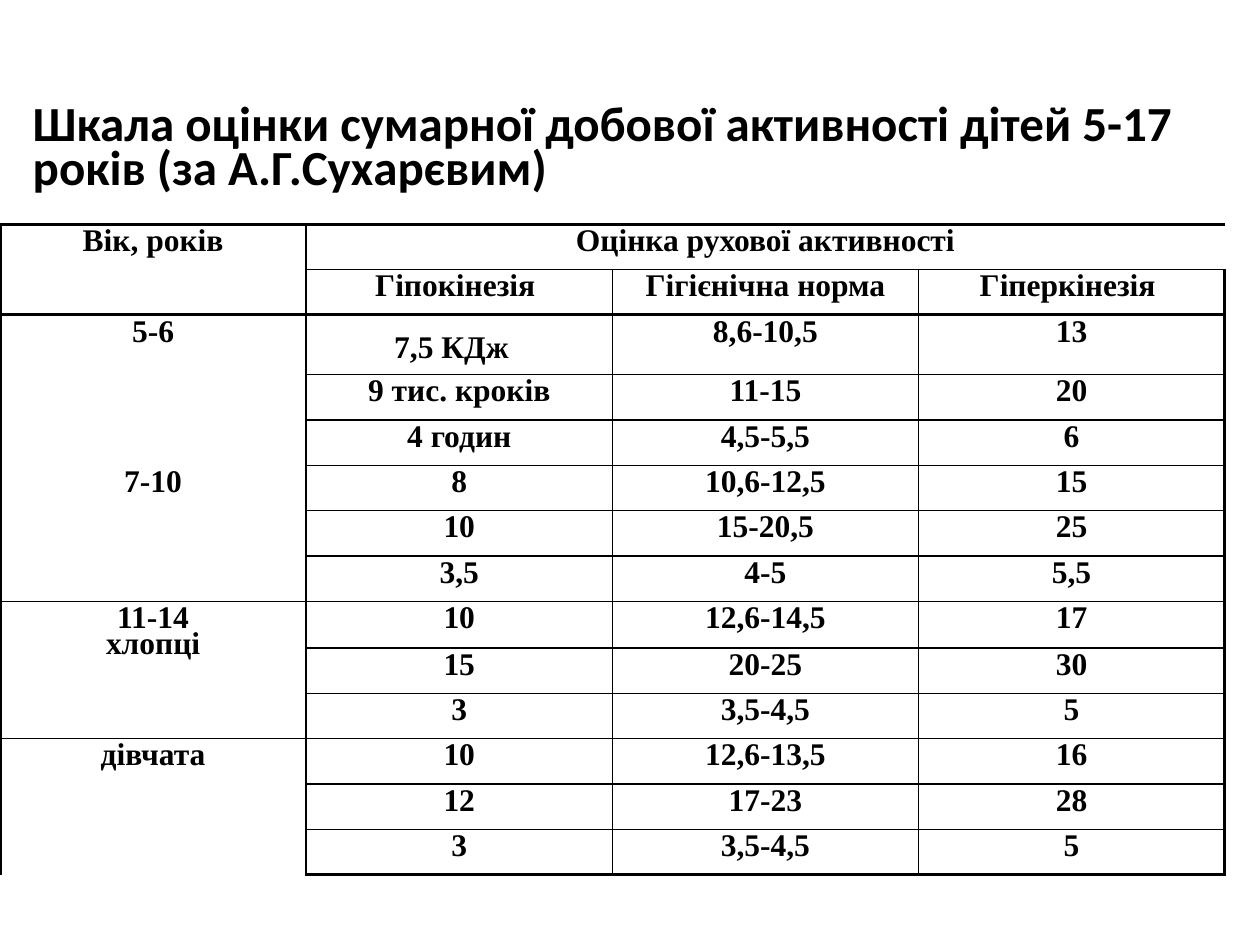
from lxml import etree
from pptx import Presentation
from pptx.dml.color import RGBColor
from pptx.enum.text import MSO_ANCHOR, PP_ALIGN
from pptx.oxml.ns import qn
from pptx.util import Inches, Pt

LEFT, CENTER = PP_ALIGN.LEFT, PP_ALIGN.CENTER
MIDDLE, TOP = MSO_ANCHOR.MIDDLE, MSO_ANCHOR.TOP
BLACK, WHITE = "000000", "FFFFFF"
TITLE = "Шкала оцінки сумарної добової активності дітей 5-17 років (за А.Г.Сухарєвим)"
AGE_HEADING = "Вік, років"
ACTIVITY_HEADING = "Оцінка рухової активності"
LEVELS = ["Гіпокінезія ", "Гігієнічна норма", "Гіперкінезія "]
AGE_GROUPS = [
    (["5-6"], [("7,5 КДж", "8,6-10,5", "13"),
               ("9 тис. кроків", "11-15", "20"),
               ("4 годин", "4,5-5,5", "6")]),
    (["7-10"], [("8", "10,6-12,5", "15"),
                ("10", "15-20,5", "25"),
                ("3,5", "4-5", "5,5")]),
    (["11-14", "хлопці"], [("10", "12,6-14,5", "17"),
                           ("15", "20-25", "30"),
                           ("3", "3,5-4,5", "5")]),
    (["дівчата"], [("10", "12,6-13,5", "16"),
                   ("12", "17-23", "28"),
                   ("3", "3,5-4,5", "5")]),
]
HEADER_ROWS, GROUP_ROWS, COLUMNS = 2, 3, 4
ROWS = HEADER_ROWS + GROUP_ROWS * len(AGE_GROUPS)
COLUMN_WIDTH, ROW_HEIGHT = 2.43, 0.36
SPECIAL_HEIGHTS = {2: 0.38, 8: 0.37}
HEAVY_ROW_LINES, HEAVY_COLUMN_LINES = (0, HEADER_ROWS, ROWS), (0, COLUMNS)


def add_run(paragraph, text, size, font, color):
    run = paragraph.add_run()
    run.text = text
    run.font.size = Pt(size)
    run.font.name = font
    run.font.bold = True
    run.font.color.rgb = RGBColor.from_string(color)


def set_border(cell, tag, width):
    line = etree.SubElement(cell._tc.get_or_add_tcPr(), qn("a:" + tag))
    if width is None:
        etree.SubElement(line, qn("a:noFill"))
        return
    line.set("w", str(Pt(width)))
    fill = etree.SubElement(line, qn("a:solidFill"))
    etree.SubElement(fill, qn("a:srgbClr")).set("val", BLACK)


def edge_width(index, first, last, heavy):
    if first < index < last:
        return None
    return 2 if index in heavy else 1


def add_block(table, top, left, lines, height=1, width=1):
    bottom, right = top + height, left + width
    for row in range(top, bottom):
        for column in range(left, right):
            cell = table.cell(row, column)
            for tag, index in (("lnL", column), ("lnR", column + 1)):
                set_border(cell, tag, edge_width(index, left, right, HEAVY_COLUMN_LINES))
            for tag, index in (("lnT", row), ("lnB", row + 1)):
                set_border(cell, tag, edge_width(index, top, bottom, HEAVY_ROW_LINES))
            cell.fill.background()
    origin = table.cell(top, left)
    if height * width > 1:
        origin.merge(table.cell(bottom - 1, right - 1))
    origin.vertical_anchor = TOP
    frame = origin.text_frame
    for number, text in enumerate(lines):
        paragraph = frame.add_paragraph() if number else frame.paragraphs[0]
        paragraph.alignment = CENTER
        paragraph.line_spacing = 0.75
        add_run(paragraph, text, 18, "Times New Roman", BLACK)


presentation = Presentation()
presentation.slide_width, presentation.slide_height = Inches(10), Inches(7.5)
slide = presentation.slides.add_slide(presentation.slide_layouts[5])

title = slide.shapes.title
title.left, title.top, title.width, title.height = map(Inches, (0.16, 0.82, 9.84, 0.75))
title.text_frame.vertical_anchor = MIDDLE
title.text_frame.word_wrap = True
heading = title.text_frame.paragraphs[0]
heading.alignment = LEFT
heading.line_spacing = 0.75
add_run(heading, TITLE, 28, "Calibri", BLACK)

table = slide.shapes.add_table(ROWS, COLUMNS, Inches(0), Inches(1.78),
                               Inches(COLUMN_WIDTH * COLUMNS), Inches(5.07)).table
table.first_row = table.horz_banding = False
for column in table.columns:
    column.width = Inches(COLUMN_WIDTH)
for index, row in enumerate(table.rows):
    row.height = Inches(SPECIAL_HEIGHTS.get(index, ROW_HEIGHT))

add_block(table, 0, 0, [AGE_HEADING], height=HEADER_ROWS)
add_block(table, 0, 1, [ACTIVITY_HEADING], width=COLUMNS - 1)
for column, level in enumerate(LEVELS, 1):
    add_block(table, 1, column, [level])
for group, (age, measures) in enumerate(AGE_GROUPS):
    top = HEADER_ROWS + group * GROUP_ROWS
    add_block(table, top, 0, age, height=GROUP_ROWS)
    for row, values in enumerate(measures, top):
        for column, value in enumerate(values, 1):
            add_block(table, row, column, [value])
energy_paragraph = table.cell(HEADER_ROWS, 1).text_frame.paragraphs[0]
add_run(energy_paragraph, " ", 32, "Arial", WHITE)

presentation.save("out.pptx")
